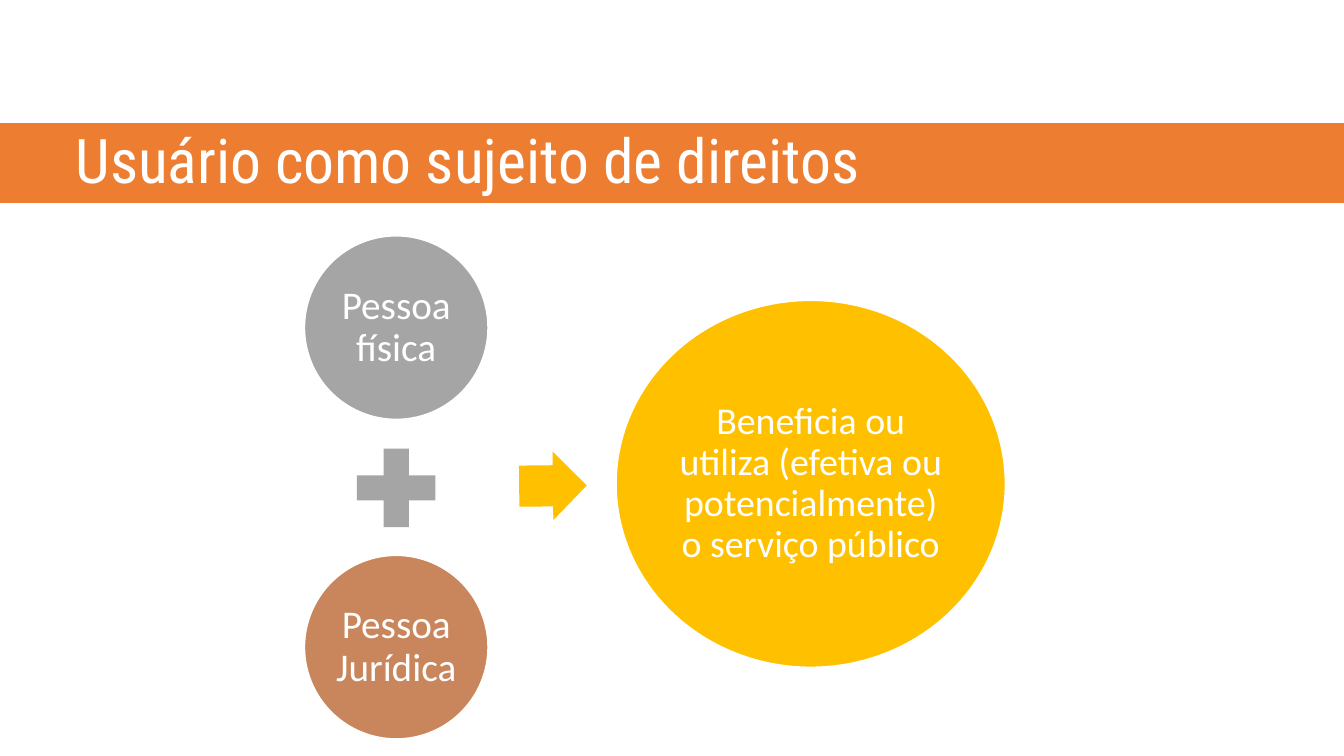
import pptx
import pptx.util
import pptx.dml.color
import pptx.enum.shapes
import pptx.enum.text

Inches = pptx.util.Inches
Pt = pptx.util.Pt
Kind = pptx.enum.shapes.MSO_SHAPE
Align = pptx.enum.text.PP_ALIGN

HUES = {
    "white": "FFFFFF",
    "gray": "A5A5A5",
    "brown": "C9865C",
    "gold": "FFC000",
    "orange": "ED7D31",
}

deck = pptx.Presentation()
deck.slide_width = Inches(13.33)
deck.slide_height = Inches(7.5)
slide = deck.slides.add_slide(deck.slide_layouts[6])


def place(left, top, width, height):
    across = deck.slide_width / 100
    down = deck.slide_height / 100
    return [int(n) for n in (left * across, top * down, width * across, height * down)]


def write(shape, words, font, size, align):
    frame = shape.text_frame
    frame.word_wrap = True
    frame.vertical_anchor = pptx.enum.text.MSO_ANCHOR.MIDDLE
    frame.text = words
    para = frame.paragraphs[0]
    para.alignment = align
    para.line_spacing = 0.9
    para.font.name = font
    para.font.size = Pt(size)
    para.font.color.rgb = pptx.dml.color.RGBColor.from_string(HUES["white"])


PARTS = [
    (Kind.OVAL, (22.66, 31.2, 13.65, 24.27), "gray", "Pessoa física", 28),
    (Kind.MATH_PLUS, (25.51, 57.47, 7.95, 14.13), "gray", "", 0),
    (Kind.OVAL, (22.66, 73.47, 13.65, 24.27), "brown", "Pessoa Jurídica", 28),
    (Kind.RIGHT_ARROW, (38.63, 59.73, 5.03, 9.07), "gold", "", 0),
    (Kind.OVAL, (45.84, 39.73, 28.96, 48.53), "gold",
     "Beneficia ou utiliza (efetiva ou potencialmente) o serviço público", 27),
    (Kind.RECTANGLE, (-2.25, 16.13, 104.13, 10.8), "orange", "", 0),
]

for kind, area, hue, words, size in PARTS:
    shape = slide.shapes.add_shape(kind, *place(*area))
    shape.shadow.inherit = False
    shape.fill.solid()
    shape.fill.fore_color.rgb = pptx.dml.color.RGBColor.from_string(HUES[hue])
    if kind in (Kind.OVAL, Kind.RECTANGLE):
        shape.line.color.rgb = pptx.dml.color.RGBColor.from_string(HUES["white"])
        shape.line.width = Pt(1)
    else:
        shape.line.fill.background()
    if kind == Kind.RIGHT_ARROW:
        shape.adjustments[0] = 0.6
        shape.adjustments[1] = 0.5
        shape.rotation = 359.4
    if words:
        frame = shape.text_frame
        frame.margin_left = frame.margin_right = Inches(0.04)
        frame.margin_top = frame.margin_bottom = Inches(0.04)
        write(shape, words, "Calibri", size, Align.CENTER)

title = slide.shapes.add_textbox(*place(4.88, 12, 86.27, 19.33))
write(title, "Usuário como sujeito de direitos", "Roboto Condensed", 44, Align.LEFT)

deck.save("out.pptx")
